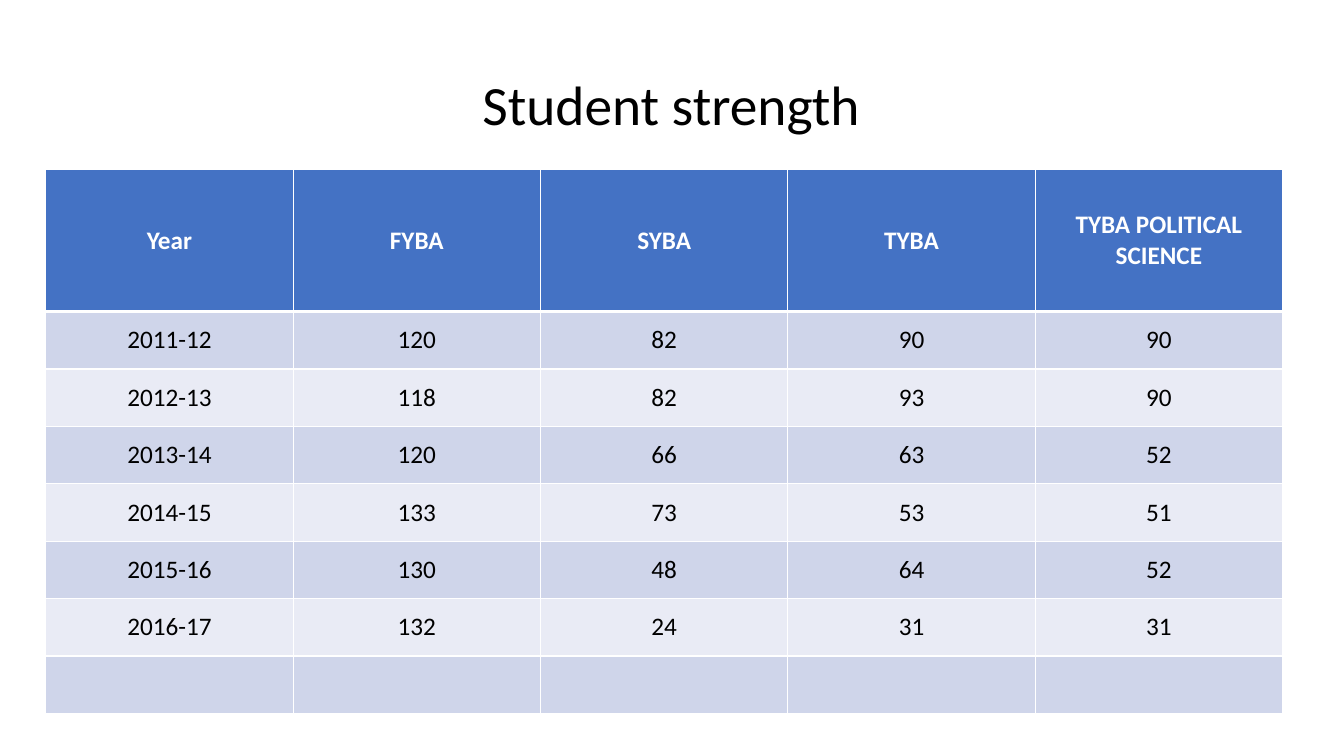
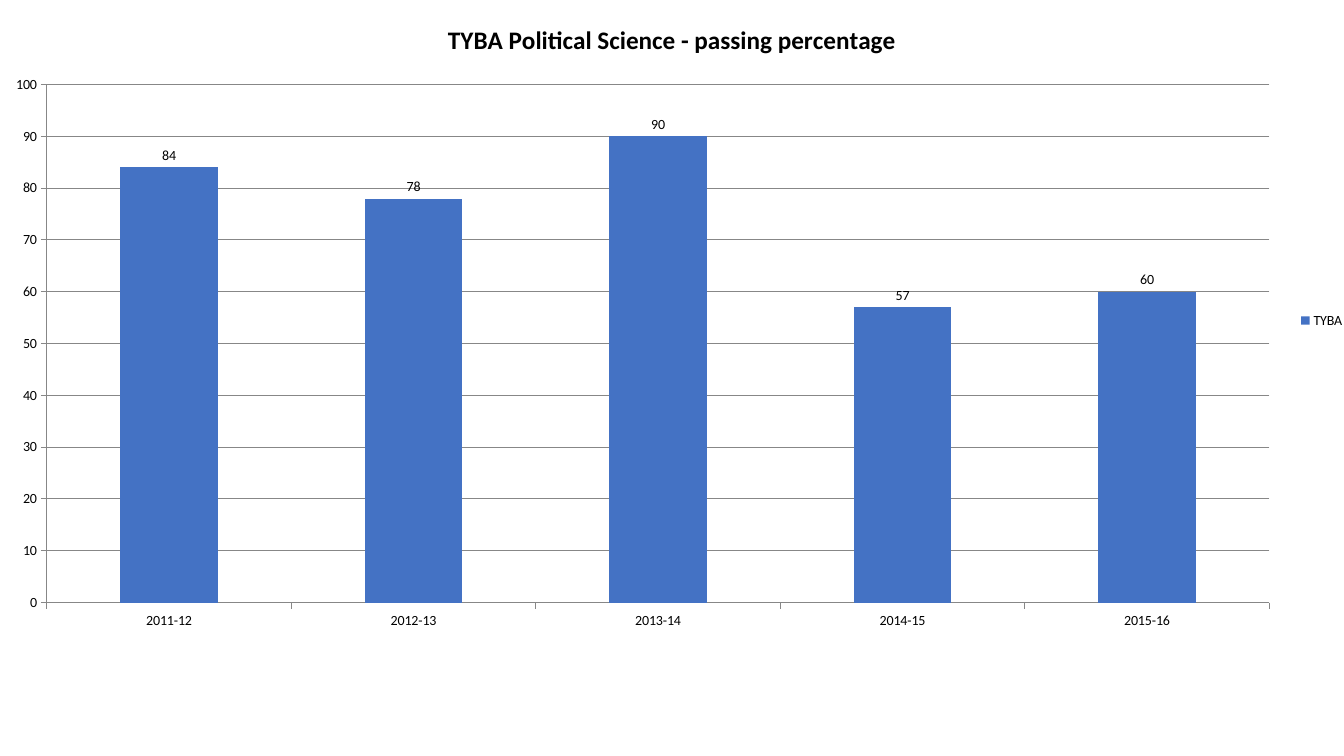
from dataclasses import dataclass

from lxml.etree import SubElement
from pptx import Presentation
from pptx.chart.data import CategoryChartData
from pptx.dml.color import RGBColor
from pptx.enum.chart import XL_CHART_TYPE, XL_LABEL_POSITION, XL_LEGEND_POSITION, XL_TICK_MARK
from pptx.enum.text import MSO_ANCHOR, PP_ALIGN
from pptx.oxml.ns import qn
from pptx.slide import Slide
from pptx.table import _Cell
from pptx.text.text import Font, _Paragraph
from pptx.util import Pt

# Shared look
FONT = "Calibri"
BLACK, WHITE, BLUE, GREY = "000000", "FFFFFF", "4472C4", "878787"
BANDS = ("CFD5EA", "E9EBF5")


@dataclass(frozen=True)
class TextStyle:
    size: float
    colour: str = BLACK
    bold: bool = False


@dataclass(frozen=True)
class Frame:
    left: float
    top: float
    width: float
    height: float

    def lengths(self) -> tuple[Pt, Pt, Pt, Pt]:
        return Pt(self.left), Pt(self.top), Pt(self.width), Pt(self.height)


SLIDE_TITLE = TextStyle(39.6)
TABLE_HEAD = TextStyle(18, WHITE, True)
TABLE_BODY = TextStyle(18)
CHART_TITLE = TextStyle(18, bold=True)
CHART_TEXT = TextStyle(10)

# Content
HEADINGS = ("Year", "FYBA", "SYBA", "TYBA", "TYBA POLITICAL SCIENCE")
STRENGTH = (
    ("2011-12", "120", "82", "90", "90"),
    ("2012-13", "118", "82", "93", "90"),
    ("2013-14", "120", "66", "63", "52"),
    ("2014-15", "133", "73", "53", "51"),
    ("2015-16", "130", "48", "64", "52"),
    ("2016-17", "132", "24", "31", "31"),
    ("",) * len(HEADINGS),
)
PASSING = {"2011-12": 84, "2012-13": 78, "2013-14": 90, "2014-15": 57, "2015-16": 60}


def colour(value: str) -> RGBColor:
    return RGBColor.from_string(value)


def style_font(font: Font, style: TextStyle) -> None:
    font.name = FONT
    font.size = Pt(style.size)
    font.bold = style.bold
    font.color.rgb = colour(style.colour)


def add_text(para: _Paragraph, text: str, style: TextStyle) -> None:
    para.alignment = PP_ALIGN.CENTER
    if text:
        span = para.add_run()
        span.text = text
        style_font(span.font, style)


def add_title(page: Slide, text: str, frame: Frame) -> None:
    box = page.shapes.add_textbox(*frame.lengths())
    box.text_frame.word_wrap = True
    box.text_frame.vertical_anchor = MSO_ANCHOR.MIDDLE
    para = box.text_frame.paragraphs[0]
    para.line_spacing = 0.9
    add_text(para, text, SLIDE_TITLE)


def set_borders(cell: _Cell, top: float, bottom: float) -> None:
    properties = cell._tc.get_or_add_tcPr()
    widths = {"a:lnL": 1, "a:lnR": 1, "a:lnT": top, "a:lnB": bottom}
    for index, (tag, width) in enumerate(widths.items()):
        line = SubElement(properties, qn(tag), w=str(Pt(width)))
        fill = SubElement(line, qn("a:solidFill"))
        SubElement(fill, qn("a:srgbClr"), val=WHITE)
        properties.insert(index, line)


def add_strength_table(page: Slide, frame: Frame, head_height: float) -> None:
    rows = (HEADINGS, *STRENGTH)
    table = page.shapes.add_table(len(rows), len(HEADINGS), *frame.lengths()).table
    for column in table.columns:
        column.width = Pt(frame.width / len(HEADINGS))
    body_height = (frame.height - head_height) / len(STRENGTH)
    for row_index, texts in enumerate(rows):
        is_head = row_index == 0
        table.rows[row_index].height = Pt(head_height if is_head else body_height)
        fill = BLUE if is_head else BANDS[(row_index - 1) % 2]
        for column_index, text in enumerate(texts):
            cell = table.cell(row_index, column_index)
            cell.vertical_anchor = MSO_ANCHOR.MIDDLE
            cell.fill.solid()
            cell.fill.fore_color.rgb = colour(fill)
            set_borders(cell, 3 if row_index == 1 else 1, 3 if is_head else 1)
            add_text(cell.text_frame.paragraphs[0], text, TABLE_HEAD if is_head else TABLE_BODY)


def add_passing_chart(page: Slide, frame: Frame) -> None:
    data = CategoryChartData()
    data.categories = list(PASSING)
    data.add_series("TYBA", list(PASSING.values()))
    chart = page.shapes.add_chart(XL_CHART_TYPE.COLUMN_CLUSTERED, *frame.lengths(), data).chart
    style_font(chart.font, CHART_TEXT)

    # Title and legend
    chart.has_title = True
    chart.chart_title.include_in_layout = False
    add_text(chart.chart_title.text_frame.paragraphs[0],
             "TYBA Political Science - passing percentage", CHART_TITLE)
    chart.has_legend = True
    chart.legend.position = XL_LEGEND_POSITION.RIGHT
    chart.legend.include_in_layout = False

    # Axes
    for axis in (chart.category_axis, chart.value_axis):
        axis.major_tick_mark = XL_TICK_MARK.OUTSIDE
        axis.minor_tick_mark = XL_TICK_MARK.NONE
        axis.format.line.color.rgb = colour(GREY)
    values = chart.value_axis
    values.minimum_scale, values.maximum_scale, values.major_unit = 0, 100, 10
    values.has_major_gridlines = True
    values.major_gridlines.format.line.color.rgb = colour(GREY)

    # Columns and their labels
    plot = chart.plots[0]
    plot.gap_width = 150
    plot.vary_by_categories = False
    series_fill = plot.series[0].format.fill
    series_fill.solid()
    series_fill.fore_color.rgb = colour(BLUE)
    plot.has_data_labels = True
    plot.data_labels.show_value = True
    plot.data_labels.position = XL_LABEL_POSITION.OUTSIDE_END
    style_font(plot.data_labels.font, CHART_TEXT)


def main() -> None:
    deck = Presentation()
    deck.slide_width, deck.slide_height = Pt(960), Pt(540)
    blank = deck.slide_layouts[6]

    # Slide 1: student numbers
    page = deck.slides.add_slide(blank)
    add_title(page, "Student strength", Frame(32.4, 46.8, 894, 60.5))
    add_strength_table(page, Frame(32.7, 121, 883.5, 388.8), 101.5)

    # Slide 2: passing percentage
    page = deck.slides.add_slide(blank)
    add_passing_chart(page, Frame(-8, 0, 976, 458))

    deck.save("out.pptx")


if __name__ == "__main__":
    main()
